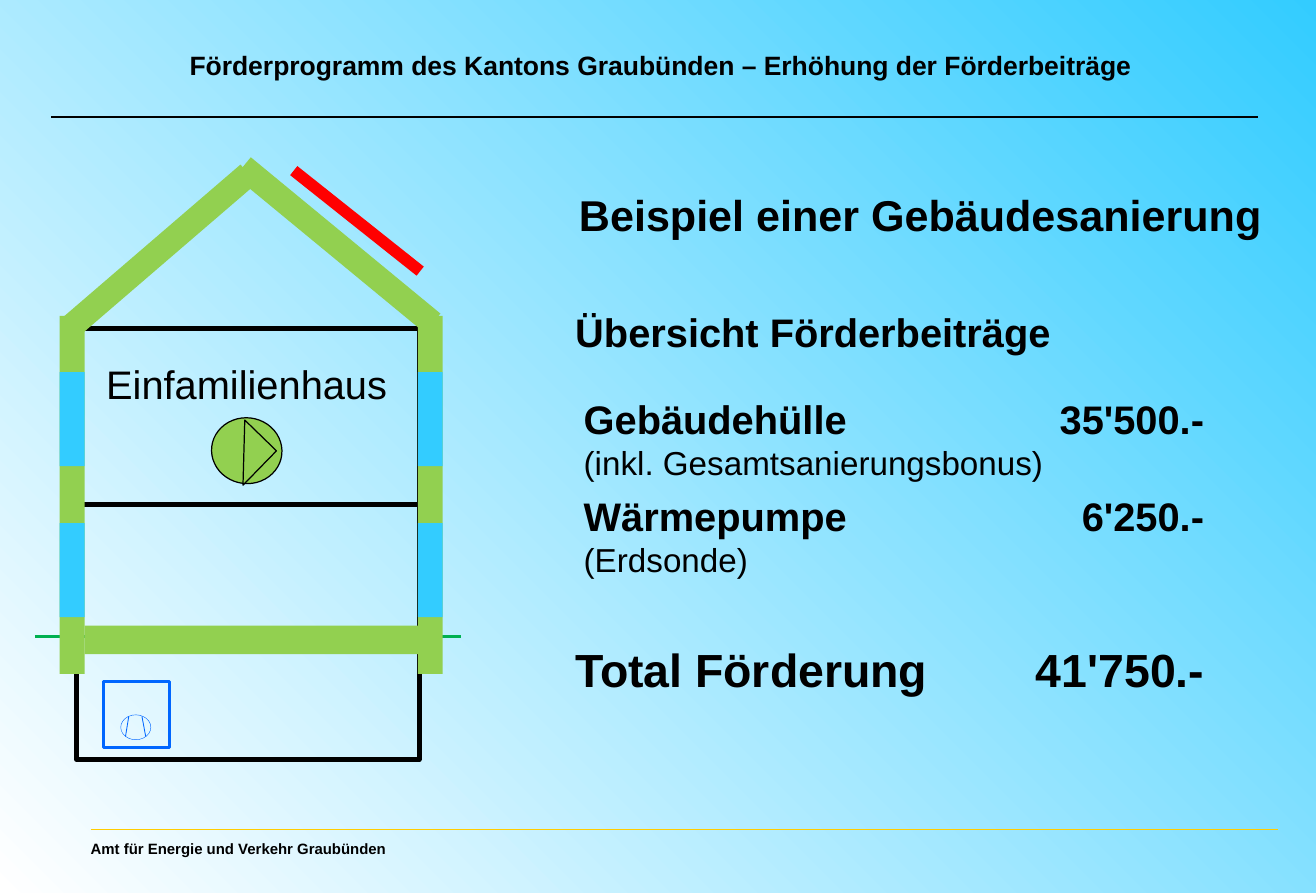
from lxml import etree
from pptx import Presentation
from pptx.dml.color import RGBColor
from pptx.enum import shapes, text
from pptx.oxml import ns
from pptx.util import Cm, Pt

COLORS = {
    "black": "000000",
    "white": "FFFFFF",
    "sky": "33CCFF",
    "insulation": "92D050",
    "ground": "00B050",
    "heat_pump": "0066FF",
    "solar": "FF0000",
    "footer": "FFCC00",
}
SHAPE = shapes.MSO_SHAPE
AMOUNT_RIGHT = 25.62
INSET = 0.25
BAND = 0.53


def rgb(name):
    return RGBColor.from_string(COLORS[name])


def add_line(page, x1, y1, x2, y2, color="black", width=1):
    line = page.shapes.add_connector(
        shapes.MSO_CONNECTOR.STRAIGHT, Cm(x1), Cm(y1), Cm(x2), Cm(y2)
    )
    line.line.color.rgb = rgb(color)
    line.line.width = Pt(width)
    properties = line._element.find(ns.qn("p:spPr"))
    etree.SubElement(properties, ns.qn("a:effectLst"))


def add_shape(page, kind, x, y, w, h, fill=None, line=None, width=1, rotation=0):
    shape = page.shapes.add_shape(kind, Cm(x), Cm(y), Cm(w), Cm(h))
    shape.shadow.inherit = False
    shape.rotation = rotation
    if fill:
        shape.fill.solid()
        shape.fill.fore_color.rgb = rgb(fill)
    else:
        shape.fill.background()
    if line:
        shape.line.color.rgb = rgb(line)
        shape.line.width = Pt(width)
    else:
        shape.line.fill.background()


def add_right_tab(para, position):
    tabs = etree.SubElement(para._p.get_or_add_pPr(), ns.qn("a:tabLst"))
    etree.SubElement(tabs, ns.qn("a:tab"), pos=str(Cm(position)), algn="r")


def add_text(page, content, x, y, w, h, size=24, bold=True, wrap=True,
             align=text.PP_ALIGN.LEFT, anchor=text.MSO_ANCHOR.TOP, note=None):
    box = page.shapes.add_textbox(Cm(x), Cm(y), Cm(w), Cm(h))
    frame = box.text_frame
    frame.word_wrap = wrap
    frame.vertical_anchor = anchor
    rows = [(content, size, bold)]
    if note:
        rows.append((note, 20, False))
    for index, (words, points, strong) in enumerate(rows):
        para = frame.add_paragraph() if index else frame.paragraphs[0]
        para.alignment = align
        if "\t" in words:
            add_right_tab(para, AMOUNT_RIGHT - x - INSET)
        span = para.add_run()
        span.text = words
        span.font.name = "Arial"
        span.font.size = Pt(points)
        span.font.bold = strong
        span.font.color.rgb = rgb("black")


def add_background(page):
    fill = page.background.fill
    fill.gradient()
    fill.gradient_angle = 45
    for stop, color in zip(fill.gradient_stops, ("white", "sky")):
        stop.color.rgb = rgb(color)


def add_frame(page):
    add_text(page, "Amt für Energie und Verkehr Graubünden", 1.68, 17.73, 6.99, 0.64,
             size=9, wrap=False, anchor=text.MSO_ANCHOR.MIDDLE)
    add_line(page, 1.93, 17.65, 27.2, 17.65, "footer")
    add_line(page, 1.09, 2.49, 26.77, 2.49, width=0.75)
    add_text(page, "Förderprogramm des Kantons Graubünden – Erhöhung der Förderbeiträge",
             3.66, 0.91, 20.8, 0.94, size=16, wrap=False, align=text.PP_ALIGN.CENTER)


def add_house(page):
    add_line(page, 0.74, 13.54, 9.8, 13.54, "ground", 2)
    add_text(page, "Einfamilienhaus", 2.01, 7.52, 6.81, 1.27, bold=False)
    add_shape(page, SHAPE.RECTANGLE, 1.63, 6.99, 7.29, 9.17, line="black", width=3)
    add_shape(page, SHAPE.ISOSCELES_TRIANGLE, 1.68, 3.94, 7.29, 3.05,
              line="black", width=0.25)
    add_line(page, 1.68, 10.74, 8.92, 10.74, width=3)
    for x, y, length, rotation in ((4.57, 4.95, 5.23, 39.5), (0.94, 5.05, 4.95, 319.3)):
        add_shape(page, SHAPE.RECTANGLE, x, y, length, BAND, "insulation",
                  rotation=rotation)
    for wall_x in (1.27, 8.89):
        add_shape(page, SHAPE.RECTANGLE, wall_x, 6.72, BAND, 7.62, "insulation")
        for window_y in (7.92, 11.13):
            add_shape(page, SHAPE.RECTANGLE, wall_x, window_y, BAND, 2, "sky")
    add_shape(page, SHAPE.RECTANGLE, 1.8, 13.31, 7.24, 0.61, "insulation")
    add_line(page, 6.25, 3.63, 8.94, 5.77, "solar", 7)


def add_equipment(page):
    add_shape(page, SHAPE.RECTANGLE, 2.21, 14.5, 1.4, 1.4, line="heat_pump", width=2)
    add_shape(page, SHAPE.OVAL, 2.57, 15.21, 0.64, 0.53, line="heat_pump", width=0.25)
    for top_x, bottom_x in ((2.74, 2.67), (3.02, 3.1)):
        add_line(page, top_x, 15.24, bottom_x, 15.67, "heat_pump", 0.5)
    add_shape(page, SHAPE.OVAL, 4.5, 8.89, 1.5, 1.4, "insulation", "black", 0.75, 6.4)
    add_shape(page, SHAPE.RIGHT_TRIANGLE, 4.72, 9.12, 0.94, 1.02,
              line="black", width=0.75, rotation=224.2)


def add_subsidies(page):
    add_text(page, "Beispiel einer Gebäudesanierung", 11.99, 3.89, 15.21, 1.37,
             size=26, wrap=False, align=text.PP_ALIGN.CENTER)
    add_text(page, "Übersicht Förderbeiträge", 11.99, 6.43, 18.39, 1.27)
    add_text(page, "Gebäudehülle\t35'500.-", 12.17, 8.28, 18.39, 2.13,
             note="(inkl. Gesamtsanierungsbonus)")
    add_text(page, "Wärmepumpe\t6'250.-", 12.17, 10.34, 18.39, 2.13, note="(Erdsonde)")
    add_text(page, "Total Förderung\t41'750.-", 11.99, 13.51, 18.39, 1.45, size=28)


def main():
    deck = Presentation()
    deck.slide_width = Cm(28)
    deck.slide_height = Cm(19)
    page = deck.slides.add_slide(deck.slide_layouts[6])
    add_background(page)
    add_frame(page)
    add_house(page)
    add_equipment(page)
    add_subsidies(page)
    deck.save("out.pptx")


if __name__ == "__main__":
    main()
